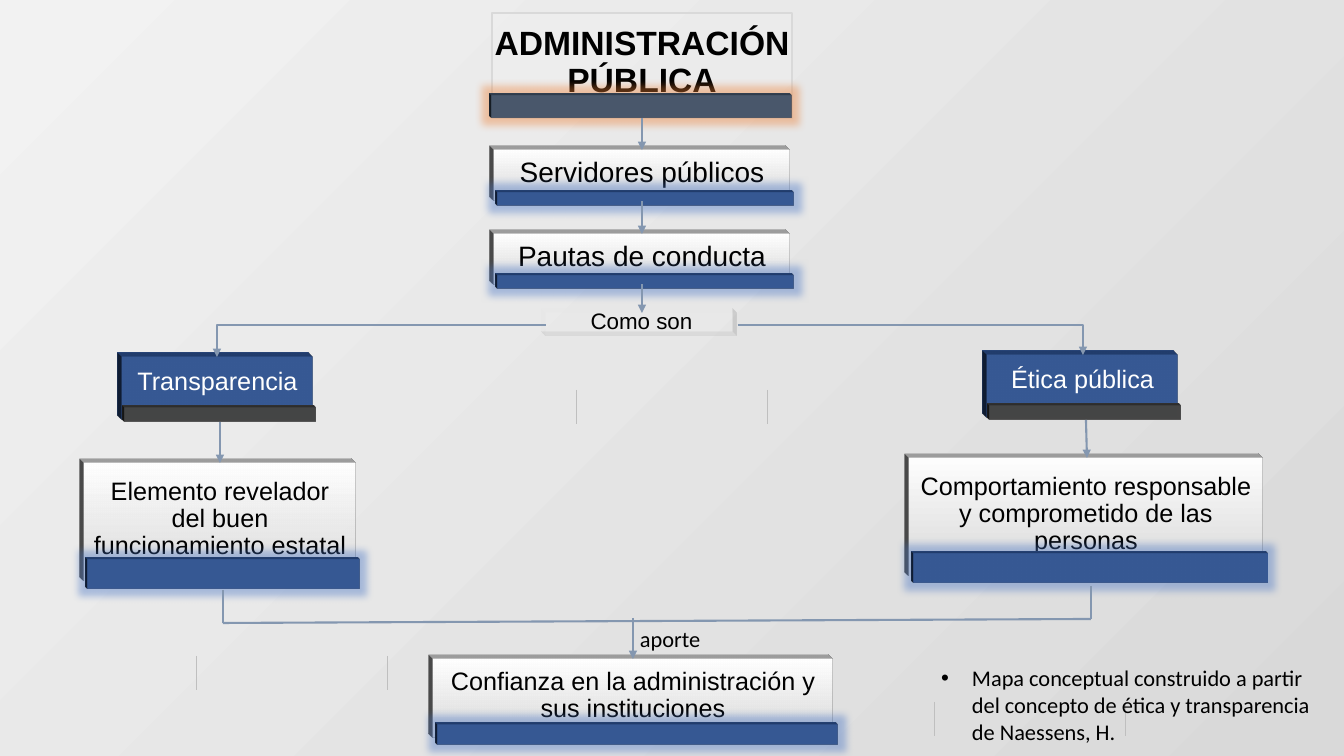
from dataclasses import dataclass

from lxml import etree
from pptx import Presentation
from pptx.dml.color import RGBColor
from pptx.enum.shapes import MSO_CONNECTOR, MSO_SHAPE
from pptx.enum.text import MSO_ANCHOR, MSO_AUTO_SIZE, PP_ALIGN
from pptx.oxml.ns import qn
from pptx.util import Pt

RECTANGLE = MSO_SHAPE.RECTANGLE
STRAIGHT, ELBOW = MSO_CONNECTOR.STRAIGHT, MSO_CONNECTOR.ELBOW
MIDDLE, TOP = MSO_ANCHOR.MIDDLE, MSO_ANCHOR.TOP
CENTER, LEFT = PP_ALIGN.CENTER, PP_ALIGN.LEFT
NO_AUTOFIT = MSO_AUTO_SIZE.NONE


@dataclass(frozen=True)
class Theme:
    """Colours, fonts and type sizes of the concept map."""
    white: str = "FFFFFF"
    black: str = "000000"
    shade: str = "D9D9D9"
    pale: str = "F2F2F2"
    blue: str = "2F5597"
    slate: str = "44546A"
    charcoal: str = "404040"
    arrow: str = "8497B0"
    tick: str = "BFBFBF"
    blue_glow: str = "4472C4"
    orange_glow: str = "ED7D31"
    map_font: str = "Arial"
    note_font: str = "Calibri"
    title: int = 24
    heading: int = 20
    body: int = 18
    small: int = 16


THEME = Theme()


def px(length):
    """Turn pixels into EMU."""
    return round(length * 914400 / 100.8)


def add_xml(parent, tag, **attributes):
    """Append a DrawingML element and return it."""
    return etree.SubElement(parent, qn(tag), attributes)


def paint_gradient(fill, start, end, angle):
    """Fill with a two-colour linear gradient."""
    fill.gradient()
    fill.gradient_angle = angle
    for stop, color in zip(fill.gradient_stops, (start, end)):
        stop.color.rgb = RGBColor.from_string(color)


def paint_solid(fill, color, opacity=100):
    """Fill with one colour at a given opacity in percent."""
    fill.solid()
    fill.fore_color.rgb = RGBColor.from_string(color)
    if opacity < 100:
        color_element = fill._xPr.find(qn("a:solidFill"))[0]
        add_xml(color_element, "a:alpha", val=str(opacity * 1000))


def outline(shape, color, width):
    """Set the line of a shape or connector."""
    shape.line.color.rgb = RGBColor.from_string(color)
    shape.line.width = Pt(width)


def extrude(shape, depth):
    """Give a shape depth towards the top left."""
    properties = shape._element.spPr
    scene = add_xml(properties, "a:scene3d")
    add_xml(scene, "a:camera", prst="obliqueTopLeft")
    add_xml(scene, "a:lightRig", rig="threePt", dir="t")
    add_xml(properties, "a:sp3d", extrusionH=str(px(depth)))


def glow(shape, color):
    """Surround a shape with a soft glow."""
    effects = shape._element.spPr.find(qn("a:effectLst"))
    halo = add_xml(effects, "a:glow", rad=str(px(15)))
    halo_color = add_xml(halo, "a:srgbClr", val=color)
    add_xml(halo_color, "a:alpha", val="40000")


def write(shape, text, size, color, font, align, anchor, margins, bold=False):
    """Write one formatted paragraph and return it."""
    frame = shape.text_frame
    frame.text = text
    frame.word_wrap = True
    frame.auto_size = NO_AUTOFIT
    frame.vertical_anchor = anchor
    frame.margin_left, frame.margin_top, frame.margin_right, frame.margin_bottom = map(px, margins)
    paragraph = frame.paragraphs[0]
    paragraph.alignment = align
    run_font = paragraph.runs[0].font
    run_font.name, run_font.size, run_font.bold = font, Pt(size), bold
    run_font.color.rgb = RGBColor.from_string(color)
    return paragraph


def add_rectangle(slide, box):
    """Add a rectangle without a shadow or an outline."""
    shape = slide.shapes.add_shape(RECTANGLE, *map(px, box))
    shape.line.fill.background()
    shape.shadow.inherit = False
    return shape


def write_card(shape, text, size, color=THEME.black, margins=(8, 1, 8, 6), bold=False):
    """Write the centred text of a card."""
    paragraph = write(shape, text, size, color, THEME.map_font, CENTER, MIDDLE, margins, bold)
    paragraph.line_spacing = 0.9


def add_bar(slide, box, color, halo=None):
    """Add the coloured bar at the foot of a card."""
    bar = add_rectangle(slide, box)
    paint_solid(bar.fill, color)
    if halo:
        glow(bar, halo)
    extrude(bar, 10)


def add_card(slide, text, size, box, bar_box):
    """Add a shaded card with a blue bar."""
    card = add_rectangle(slide, box)
    paint_gradient(card.fill, THEME.white, THEME.shade, 270)
    outline(card, THEME.shade, 0.25)
    extrude(card, 21)
    write_card(card, text, size)
    add_bar(slide, bar_box, THEME.blue, THEME.blue_glow)


def add_branch(slide, text, left, top):
    """Add a blue branch heading with a dark bar."""
    branch = add_rectangle(slide, (left, top, 191, 63))
    paint_solid(branch.fill, THEME.blue)
    extrude(branch, 21)
    write_card(branch, text, THEME.body, THEME.white, (8, 0, 8, 12))
    add_bar(slide, (left + 3, top + 51, 191, 14), THEME.charcoal)


def add_line(slide, points, color=THEME.arrow, width=1.5, arrow=True, kind=STRAIGHT):
    """Add a connector, with an arrowhead if asked."""
    connector = slide.shapes.add_connector(kind, *map(px, points))
    outline(connector, color, width)
    properties = connector._element.spPr
    if kind == ELBOW:
        properties.find(qn("a:prstGeom")).set("prst", "bentConnector2")
    if arrow:
        add_xml(properties.find(qn("a:ln")), "a:tailEnd", type="triangle")
    add_xml(properties, "a:effectLst")


def add_note(slide, text, box, bullet=False):
    """Add a plain text note, with a bullet if asked."""
    note = slide.shapes.add_textbox(*map(px, box))
    paragraph = write(note, text, THEME.small, THEME.black, THEME.note_font, LEFT, TOP, (10, 5, 10, 5))
    if bullet:
        properties = paragraph._p.get_or_add_pPr()
        properties.set("marL", str(px(31)))
        properties.set("indent", str(px(-31)))
        add_xml(properties, "a:buFont", typeface="Arial")
        add_xml(properties, "a:buChar", char="•")


def add_title(slide, text, box):
    """Place the title and its bar."""
    title = slide.shapes.title
    title.left, title.top, title.width, title.height = map(px, box)
    paint_solid(title.fill, THEME.white, 10)
    outline(title, THEME.shade, 1)
    write_card(title, text, THEME.title, margins=(1, 1, 1, 6), bold=True)
    add_bar(slide, (492, 96, 300, 22), THEME.slate, THEME.orange_glow)


def add_link_word(slide, text, box):
    """Add the small linking label."""
    label = add_rectangle(slide, box)
    paint_solid(label.fill, THEME.white, 10)
    outline(label, THEME.shade, 1)
    extrude(label, 21)
    write_card(label, text, THEME.small, margins=(1, 1, 1, 6))


def main():
    """Build the concept map."""
    presentation = Presentation()
    presentation.slide_width, presentation.slide_height = px(1344), px(756)
    slide = presentation.slides.add_slide(presentation.slide_layouts[5])
    paint_gradient(slide.background.fill, THEME.shade, THEME.pale, 135)

    for left, top in ((196, 656), (576, 390), (934, 702)):
        for x in (left, left + 191):
            add_line(slide, (x, top, x, top + 34), THEME.tick, 0.25, arrow=False)

    add_title(slide, "ADMINISTRACIÓN PÚBLICA", (492, 13, 300, 105))
    add_link_word(slide, "Como son", (546, 313, 191, 23))
    for text, size, box, bar_box in (
        ("Servidores públicos", THEME.heading, (494, 150, 296, 51), (498, 193, 296, 13)),
        ("Pautas de conducta", THEME.heading, (494, 234, 296, 51), (498, 276, 296, 13)),
        ("Elemento revelador del buen funcionamiento estatal", THEME.body,
         (84, 463, 272, 118), (88, 560, 272, 29)),
        ("Comportamiento responsable y comprometido de las personas", THEME.body,
         (909, 458, 354, 118), (914, 554, 354, 29)),
        ("Confianza en la administración y sus instituciones", THEME.body,
         (433, 659, 400, 79), (438, 725, 400, 20)),
    ):
        add_card(slide, text, size, box, bar_box)
    add_branch(slide, "Transparencia", 122, 357)
    add_branch(slide, "Ética pública", 987, 355)

    for points in ((642, 118, 642, 150), (642, 201, 642, 234), (642, 284, 642, 313),
                   (220, 422, 220, 463), (1086, 420, 1087, 458), (633, 618, 633, 659)):
        add_line(slide, points)
    for points in ((546, 325, 217, 357), (738, 325, 1083, 355)):
        add_line(slide, points, kind=ELBOW)
    for points in ((223, 590, 223, 623), (1091, 586, 1091, 619), (223, 623, 1091, 619)):
        add_line(slide, points, arrow=False)

    add_note(slide, "aporte", (630, 620, 155, 37))
    add_note(slide, "Mapa conceptual construido a partir del concepto de ética y transparencia de Naessens, H.",
             (931, 659, 400, 92), bullet=True)
    presentation.save("out.pptx")


if __name__ == "__main__":
    main()
